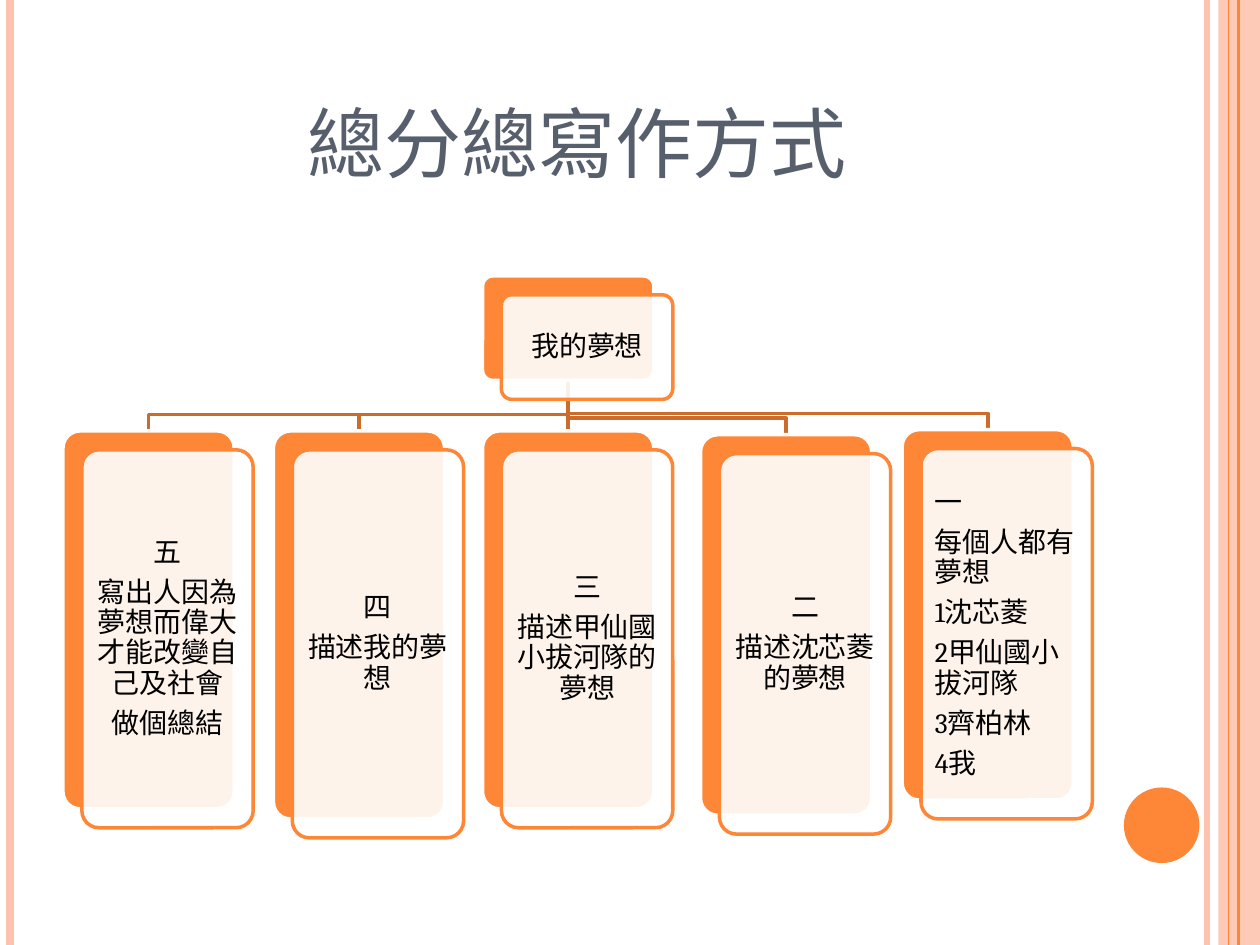
"""Build a slide with an organisation chart of an essay structure."""
import lxml.etree
import pptx
import pptx.dml.color
import pptx.enum.shapes
import pptx.enum.text
import pptx.oxml.ns
import pptx.util
from pptx.util import Inches

ORANGE = pptx.dml.color.RGBColor(0xFE, 0x86, 0x37)
PEACH = pptx.dml.color.RGBColor(0xFE, 0xC3, 0xAE)
BROWN = pptx.dml.color.RGBColor(0xCB, 0x6B, 0x2C)
SLATE = pptx.dml.color.RGBColor(0x57, 0x5F, 0x6D)
WHITE = pptx.dml.color.RGBColor(0xFF, 0xFF, 0xFF)
BLACK = pptx.dml.color.RGBColor(0, 0, 0)
SHAPES = pptx.enum.shapes.MSO_SHAPE
ANCHOR = pptx.enum.text.MSO_ANCHOR
ALIGN = pptx.enum.text.PP_ALIGN
STRAIGHT = pptx.enum.shapes.MSO_CONNECTOR.STRAIGHT
qn = pptx.oxml.ns.qn

CARD_WIDTH = 1.36
CARD_OFFSET = 0.15
ROOT = (3.83, 2.19, 0.83, ["我的夢想"], ALIGN.CENTER)
BRANCHES = [
    (0.5, 3.42, 3, ["五", "寫出人因為夢想而偉大才能改變自己及社會", "做個總結"], ALIGN.CENTER),
    (2.17, 3.42, 3.08, ["四", "描述我的夢想"], ALIGN.CENTER),
    (3.83, 3.42, 3, ["三", "描述甲仙國小拔河隊的夢想"], ALIGN.CENTER),
    (5.56, 3.45, 3.02, ["二", "描述沈芯菱的夢想"], ALIGN.CENTER),
    (7.16, 3.41, 2.94,
     ["一", "每個人都有夢想", "1沈芯菱", "2甲仙國小拔河隊", "3齊柏林", "4我"], ALIGN.LEFT),
]


def write_text(text_frame, lines, size, color, align, anchor, spacing=None, after=0):
    text_frame.word_wrap = True
    text_frame.vertical_anchor = anchor
    for index, line in enumerate(lines):
        paragraph = text_frame.paragraphs[0] if index == 0 else text_frame.add_paragraph()
        paragraph.alignment = align
        paragraph.line_spacing = spacing
        paragraph.space_after = pptx.util.Pt(after)
        run = paragraph.add_run()
        run.text = line
        run.font.name = "Cambria"
        run.font.size = pptx.util.Pt(size)
        run.font.color.rgb = color


def add_filled(kind, left, top, width, height, fill, line=None, opacity=100):
    shape = slide.shapes.add_shape(
        kind, Inches(left), Inches(top), Inches(width), Inches(height))
    shape.shadow.inherit = False
    shape.fill.solid()
    shape.fill.fore_color.rgb = fill
    if opacity < 100:
        color = shape.fill._xPr.find(qn("a:solidFill"))[0]
        lxml.etree.SubElement(color, qn("a:alpha"), val=str(opacity * 1000))
    if line is None:
        shape.line.fill.background()
    else:
        shape.line.color.rgb = line
        shape.line.width = pptx.util.Pt(2)
    return shape


presentation = pptx.Presentation()
presentation.slide_width = Inches(10)
presentation.slide_height = Inches(7.5)
slide = presentation.slides.add_slide(presentation.slide_layouts[5])

title = slide.shapes.title
title.left, title.top = Inches(0.5), Inches(0.3)
title.width, title.height = Inches(8.17), Inches(1.24)
write_text(title.text_frame, ["總分總寫作方式"], 44, SLATE, ALIGN.CENTER, ANCHOR.BOTTOM)

add_filled(SHAPES.RECTANGLE, 9.67, 0, 0.33, 7.5, PEACH, opacity=87)
add_filled(SHAPES.OVAL, 8.92, 6.25, 0.6, 0.6, ORANGE)

root_center = ROOT[0] + CARD_WIDTH / 2
root_bottom = ROOT[1] + ROOT[2]
straight_lines = [
    (9.58, 0, 7.5, PEACH, 3),
    (0.08, 0, 7.5, PEACH, 4.5),
    (9.83, 0, 7.5, ORANGE, 1.5),
    (9.75, 0, 7.5, ORANGE, 0.75),
    (root_center, root_bottom, BRANCHES[2][1], BROWN, 2),
]
for x, top, bottom, color, weight in straight_lines:
    connector = slide.shapes.add_connector(
        STRAIGHT, Inches(x), Inches(top), Inches(x), Inches(bottom))
    connector.line.color.rgb = color
    connector.line.width = pptx.util.Pt(weight)
    lxml.etree.SubElement(connector._element.spPr, qn("a:effectLst"))
middle_connector = connector

for left, top, *_ in BRANCHES:
    if left == ROOT[0]:
        continue
    center = left + CARD_WIDTH / 2
    bend = top - 0.13
    builder = slide.shapes.build_freeform(Inches(root_center), Inches(root_bottom))
    points = [(root_center, bend), (center, bend), (center, top)]
    builder.add_line_segments([(Inches(x), Inches(y)) for x, y in points], close=False)
    branch_line = builder.convert_to_shape()
    branch_line.shadow.inherit = False
    branch_line.fill.background()
    branch_line.line.color.rgb = BROWN
    branch_line.line.width = pptx.util.Pt(2)

back_cards = []
for left, top, height, lines, align in [ROOT, *BRANCHES]:
    back = add_filled(SHAPES.ROUNDED_RECTANGLE, left, top, CARD_WIDTH, height, ORANGE, WHITE)
    front = add_filled(SHAPES.ROUNDED_RECTANGLE, left + CARD_OFFSET, top + CARD_OFFSET,
                       CARD_WIDTH, height, WHITE, ORANGE, opacity=90)
    for card in (back, front):
        card.adjustments[0] = 0.1
    frame = front.text_frame
    frame.margin_left = frame.margin_right = Inches(0.07)
    frame.margin_top = frame.margin_bottom = Inches(0.07)
    write_text(frame, lines, 16, BLACK, align, ANCHOR.MIDDLE, spacing=0.9, after=5.6)
    back_cards.append(back)

middle_connector.begin_connect(back_cards[0], 2)
middle_connector.end_connect(back_cards[3], 0)

presentation.save("out.pptx")
